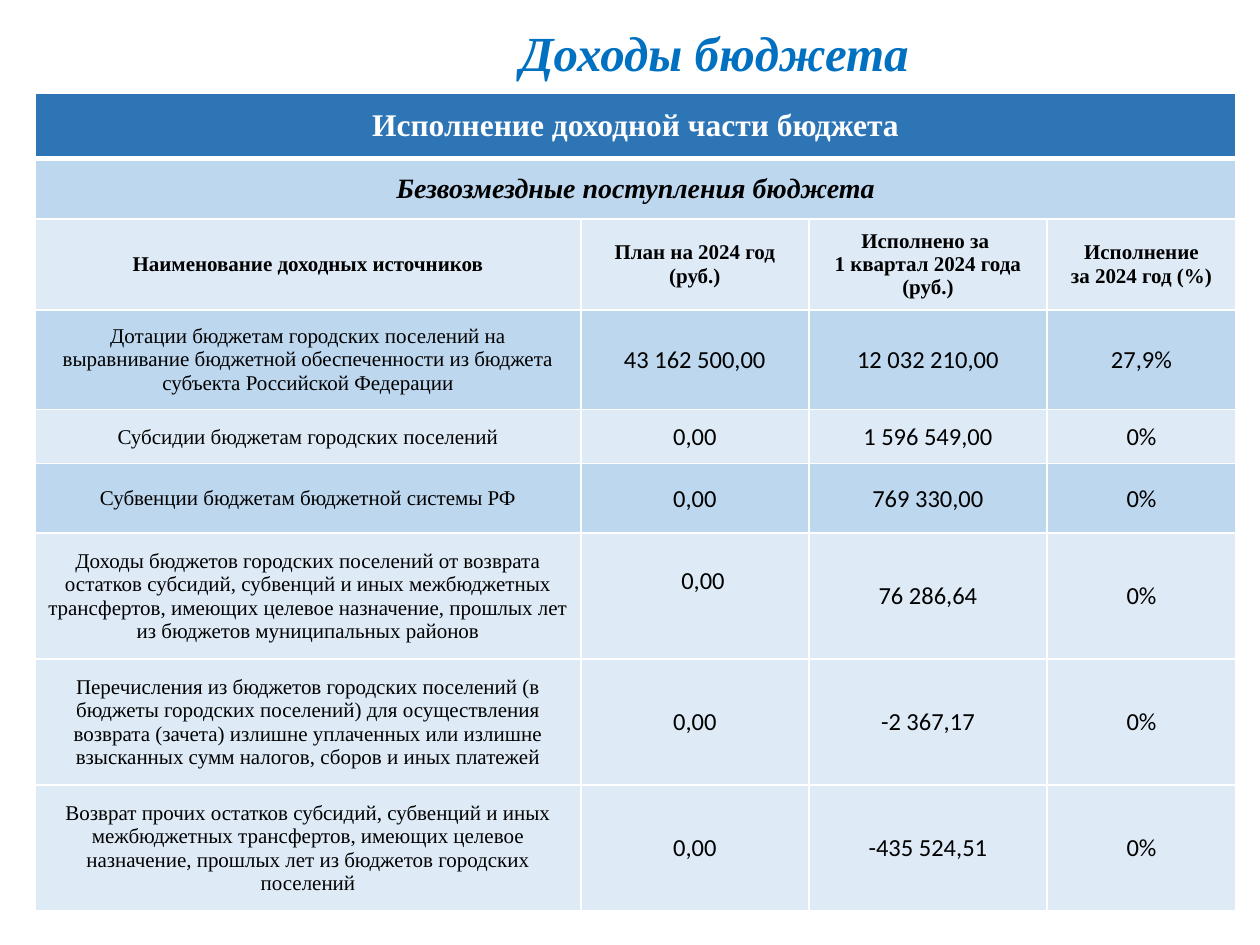
"""Build the budget revenue slide with its execution table."""
from dataclasses import dataclass

from lxml.etree import SubElement
from pptx import Presentation
from pptx.dml.color import RGBColor
from pptx.enum.text import MSO_ANCHOR as Anchor, PP_ALIGN as Align
from pptx.oxml.ns import qn
from pptx.util import Inches, Pt

WHITE = RGBColor(0xFF, 0xFF, 0xFF)
BLACK = RGBColor(0x00, 0x00, 0x00)
TITLE_BLUE = RGBColor(0x00, 0x70, 0xC0)
HEADER_BLUE = RGBColor(0x2E, 0x75, 0xB6)
MID_BLUE = RGBColor(0xBD, 0xD7, 0xEE)
PALE_BLUE = RGBColor(0xDE, 0xEB, 0xF7)
SERIF, SANS = "Times New Roman", "Calibri"
COLUMN_WIDTHS = (4.33, 1.81, 1.89, 1.5)
ROW_HEIGHTS = (0.52, 0.48, 0.72, 0.79, 0.43, 0.55, 1, 1, 1)
WIDE_MARGINS = (0.1, 0.05, 0.1, 0.05)
TIGHT_MARGINS = (0.01, 0.01, 0.01, 0)
RAISED_MARGINS = (0.14, 0.01, 0.01, 0.24)


@dataclass(frozen=True)
class TextStyle:
    size: int
    name: str = SERIF
    color: RGBColor = BLACK
    bold: bool = False
    italic: bool = False


@dataclass(frozen=True)
class Row:
    texts: tuple[str, ...]
    fill: RGBColor
    styles: tuple[TextStyle, ...]


TITLE = TextStyle(28, color=TITLE_BLUE, bold=True, italic=True)
BANNER = TextStyle(18, color=WHITE, bold=True)
SECTION = TextStyle(16, bold=True, italic=True)
HEADING = TextStyle(12, bold=True)
SOURCE = TextStyle(12)
AMOUNT = TextStyle(14, SANS)
DATA_STYLES = (SOURCE, AMOUNT, AMOUNT, AMOUNT)

ROWS = (
    Row(("Исполнение доходной части бюджета",), HEADER_BLUE, (BANNER,)),
    Row(("Безвозмездные поступления бюджета",), MID_BLUE, (SECTION,)),
    Row(("Наименование доходных источников", "План на 2024 год\n(руб.)",
         "Исполнено за \v1 квартал 2024 года\n(руб.)", "Исполнение\vза 2024 год (%)"),
        PALE_BLUE, (HEADING,) * 4),
    Row(("Дотации бюджетам городских поселений на выравнивание бюджетной "
         "обеспеченности из бюджета субъекта Российской Федерации",
         "43 162 500,00", "12 032 210,00", "27,9%"), MID_BLUE, DATA_STYLES),
    Row(("Субсидии бюджетам городских поселений", "0,00", "1 596 549,00", "0%"),
        PALE_BLUE, DATA_STYLES),
    Row(("Субвенции бюджетам бюджетной системы РФ", "0,00", "769 330,00", "0%"),
        MID_BLUE, DATA_STYLES),
    Row(("Доходы бюджетов городских поселений от возврата остатков субсидий, субвенций "
         "и иных межбюджетных трансфертов, имеющих целевое назначение, прошлых лет "
         "из бюджетов муниципальных районов", "0,00", "76 286,64", "0%"),
        PALE_BLUE, DATA_STYLES),
    Row(("Перечисления из бюджетов городских поселений (в бюджеты городских поселений) "
         "для осуществления возврата (зачета) излишне уплаченных или излишне взысканных "
         "сумм налогов, сборов и иных платежей", "0,00", "-2 367,17", "0%"),
        PALE_BLUE, DATA_STYLES),
    Row(("Возврат прочих остатков субсидий, субвенций и иных межбюджетных трансфертов, "
         "имеющих целевое назначение, прошлых лет из бюджетов городских поселений",
         "0,00", "-435 524,51", "0%"), PALE_BLUE, DATA_STYLES),
)


def write_text(text_frame, text: str, style: TextStyle) -> None:
    text_frame.text = text
    for paragraph in text_frame.paragraphs:
        paragraph.alignment = Align.CENTER
        font = paragraph.font
        font.name, font.size = style.name, Pt(style.size)
        font.bold, font.italic = style.bold, style.italic
        font.color.rgb = style.color


def add_borders(cell, top: float, bottom: float) -> None:
    properties = cell._tc.get_or_add_tcPr()
    for side, width in (("L", 1), ("R", 1), ("T", top), ("B", bottom)):
        line = SubElement(properties, qn(f"a:ln{side}"), w=str(Pt(width)))
        SubElement(SubElement(line, qn("a:solidFill")), qn("a:srgbClr"), val=str(WHITE))


def choose_margins(row: int, column: int) -> tuple[float, ...]:
    if row < 3 or (row, column) == (3, 0):
        return WIDE_MARGINS
    return RAISED_MARGINS if (row, column) == (6, 1) else TIGHT_MARGINS


def add_budget_table(slide) -> None:
    table = slide.shapes.add_table(
        len(ROWS), len(COLUMN_WIDTHS), Inches(0.28), Inches(0.74),
        Inches(sum(COLUMN_WIDTHS)), Inches(sum(ROW_HEIGHTS))).table
    for column, width in zip(table.columns, COLUMN_WIDTHS):
        column.width = Inches(width)
    for index, (row, height) in enumerate(zip(ROWS, ROW_HEIGHTS)):
        table.rows[index].height = Inches(height)
        for column in range(len(COLUMN_WIDTHS)):
            cell = table.cell(index, column)
            add_borders(cell, 3 if index == 1 else 1, 3 if index == 0 else 1)
            cell.fill.solid()
            cell.fill.fore_color.rgb = row.fill
            cell.vertical_anchor = Anchor.MIDDLE
            margins = map(Inches, choose_margins(index, column))
            cell.margin_left, cell.margin_top, cell.margin_right, cell.margin_bottom = margins
        for column, (text, style) in enumerate(zip(row.texts, row.styles)):
            write_text(table.cell(index, column).text_frame, text, style)
        if len(row.texts) == 1:
            table.cell(index, 0).merge(table.cell(index, len(COLUMN_WIDTHS) - 1))


def add_title(slide) -> None:
    box = slide.shapes.add_textbox(Inches(3.82), Inches(0.13), Inches(3.7), Inches(0.57))
    box.text_frame.word_wrap = True
    write_text(box.text_frame, "Доходы бюджета", TITLE)


def main() -> None:
    presentation = Presentation()
    presentation.slide_width, presentation.slide_height = Inches(10), Inches(7.5)
    slide = presentation.slides.add_slide(presentation.slide_layouts[6])
    add_budget_table(slide)
    add_title(slide)
    presentation.save("out.pptx")


if __name__ == "__main__":
    main()
